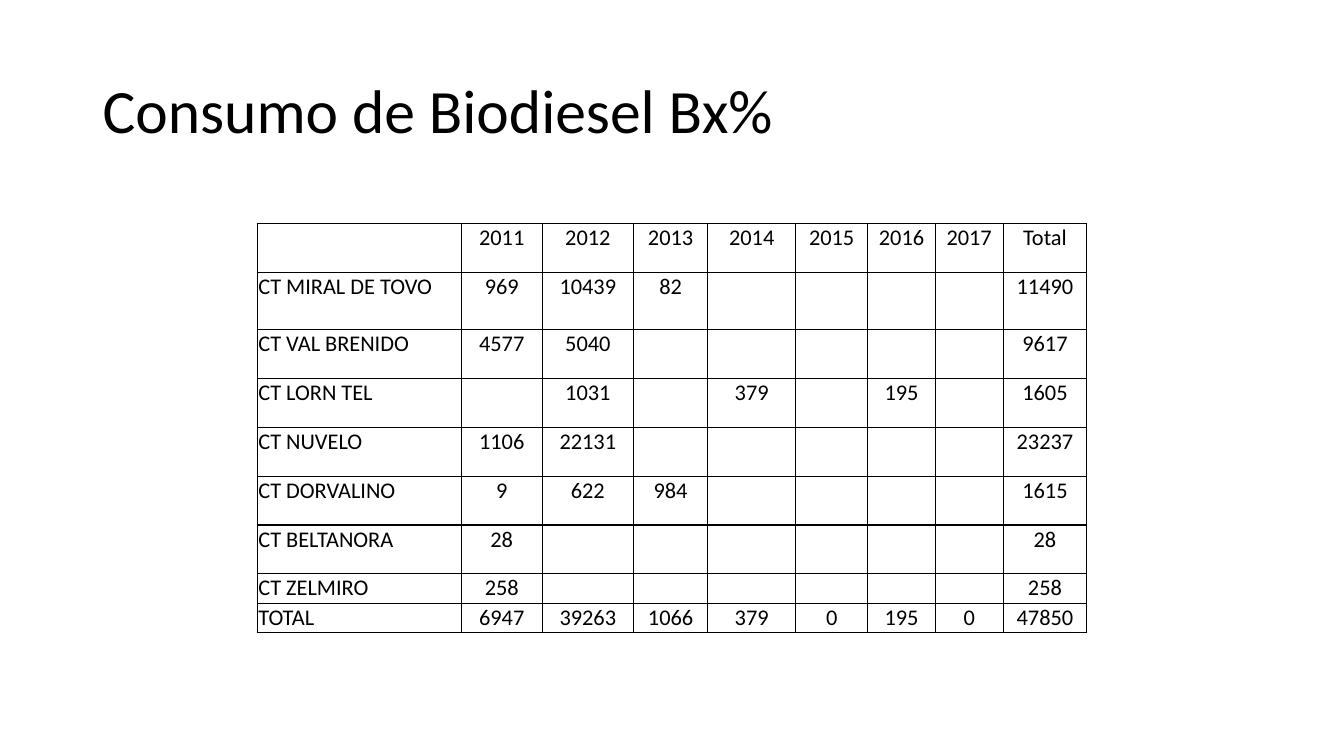
from dataclasses import dataclass

import pptx
import pptx.dml.color
import pptx.enum.text
import pptx.oxml
import pptx.oxml.ns
import pptx.util

Cm = pptx.util.Cm
Pt = pptx.util.Pt
Align = pptx.enum.text.PP_ALIGN
FONT = "Calibri"
BLACK = "000000"
CELL_SIZE = 16


@dataclass
class Column:
    heading: str
    width: float
    align: Align = Align.CENTER


@dataclass
class Plant:
    values: tuple[str, ...]
    height: float = 1.23


COLUMNS = [
    Column("", 5.13, Align.LEFT),
    Column("2011", 2.05),
    Column("2012", 2.29),
    Column("2013", 1.88),
    Column("2014", 2.21),
    Column("2015", 1.82),
    Column("2016", 1.7),
    Column("2017", 1.71),
    Column("Total", 2.11),
]

PLANTS = [
    Plant(("CT MIRAL DE TOVO", "969", "10439", "82", "", "", "", "", "11490"), 1.45),
    Plant(("CT VAL BRENIDO", "4577", "5040", "", "", "", "", "", "9617")),
    Plant(("CT LORN TEL", "", "1031", "", "379", "", "195", "", "1605")),
    Plant(("CT NUVELO", "1106", "22131", "", "", "", "", "", "23237")),
    Plant(("CT DORVALINO", "9", "622", "984", "", "", "", "", "1615")),
    Plant(("CT BELTANORA", "28", "", "", "", "", "", "", "28")),
    Plant(("CT ZELMIRO", "258", "", "", "", "", "", "", "258"), 0.74),
    Plant(("TOTAL", "6947", "39263", "1066", "379", "0", "195", "0", "47850"), 0.74),
]


def color(value: str) -> pptx.dml.color.RGBColor:
    return pptx.dml.color.RGBColor.from_string(value)


def format_runs(paragraph, size: float) -> None:
    for run in paragraph.runs:
        run.font.name = FONT
        run.font.size = Pt(size)
        run.font.color.rgb = color(BLACK)


def add_borders(cell, width: float) -> None:
    properties = cell._tc.get_or_add_tcPr()
    for side in ("lnL", "lnR", "lnT", "lnB"):
        properties.append(pptx.oxml.parse_xml(
            f'<a:{side} {pptx.oxml.ns.nsdecls("a")} w="{Pt(width)}">'
            f'<a:solidFill><a:srgbClr val="{BLACK}"/></a:solidFill></a:{side}>'))


def fill_cell(cell, text: str, align: Align) -> None:
    cell.margin_left = cell.margin_right = cell.margin_top = Cm(0.02)
    cell.margin_bottom = 0
    add_borders(cell, 1)
    cell.fill.background()
    cell.text_frame.text = text
    paragraph = cell.text_frame.paragraphs[0]
    paragraph.alignment = align
    format_runs(paragraph, CELL_SIZE)
    if not text:
        paragraph._p.append(pptx.oxml.parse_xml(
            f'<a:endParaRPr {pptx.oxml.ns.nsdecls("a")} sz="{CELL_SIZE * 100}"/>'))


def add_title(slide, text: str) -> None:
    title = slide.shapes.title
    title.left, title.top = Cm(2.33), Cm(1.01)
    title.width, title.height = Cm(29.21), Cm(3.68)
    title.text_frame.text = text
    title.text_frame.auto_size = pptx.enum.text.MSO_AUTO_SIZE.NONE
    title.text_frame.vertical_anchor = pptx.enum.text.MSO_ANCHOR.MIDDLE
    paragraph = title.text_frame.paragraphs[0]
    paragraph.alignment = Align.LEFT
    paragraph.line_spacing = 0.9
    format_runs(paragraph, 44)


def add_consumption_table(slide) -> None:
    rows = [Plant(tuple(column.heading for column in COLUMNS)), *PLANTS]
    width = sum(column.width for column in COLUMNS)
    height = sum(row.height for row in rows)
    table = slide.shapes.add_table(
        len(rows), len(COLUMNS), Cm(6.49), Cm(5.63), Cm(width), Cm(height)).table
    table.first_row = False
    table.horz_banding = False
    for index, column in enumerate(COLUMNS):
        table.columns[index].width = Cm(column.width)
    for row_index, row in enumerate(rows):
        table.rows[row_index].height = Cm(row.height)
        for column_index, (column, text) in enumerate(zip(COLUMNS, row.values)):
            fill_cell(table.cell(row_index, column_index), text, column.align)


def main() -> None:
    presentation = pptx.Presentation()
    presentation.slide_width = Cm(33.87)
    presentation.slide_height = Cm(19.05)
    slide = presentation.slides.add_slide(presentation.slide_layouts[5])
    add_title(slide, "Consumo de Biodiesel Bx%")
    add_consumption_table(slide)
    presentation.save("out.pptx")


if __name__ == "__main__":
    main()
